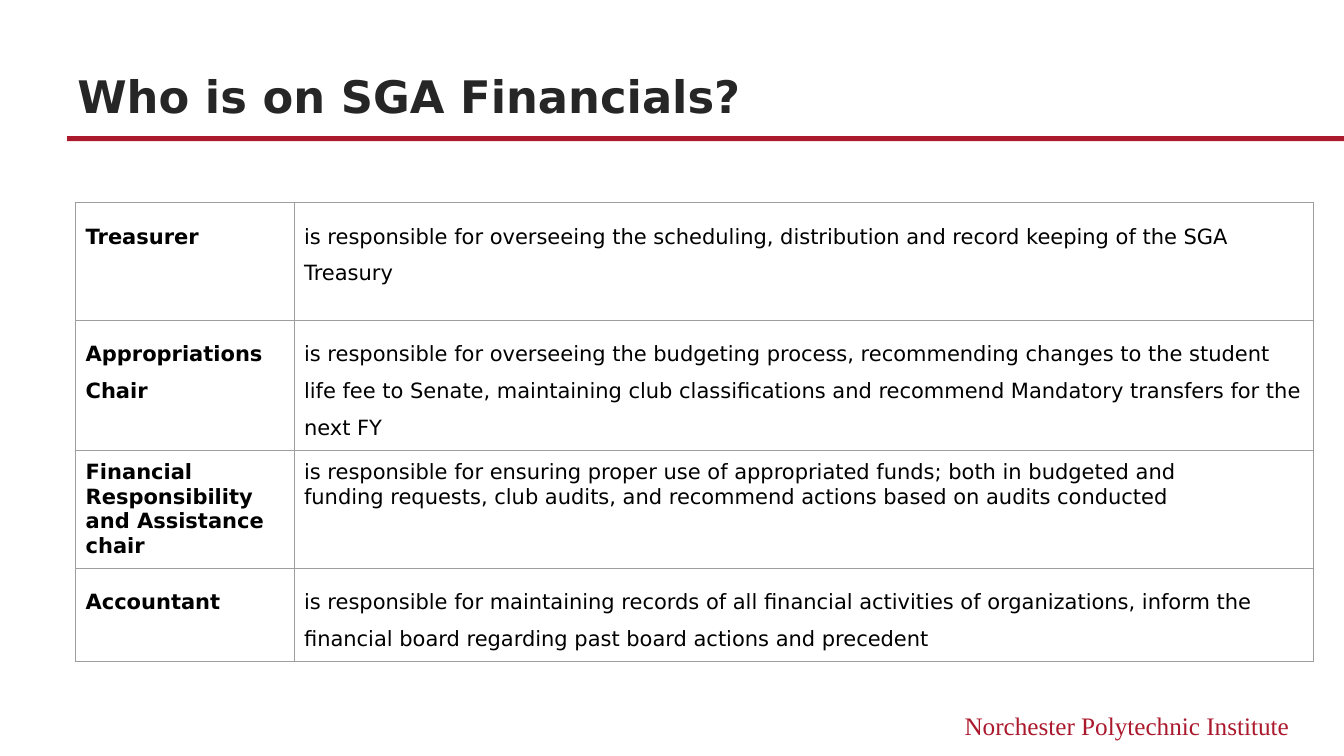
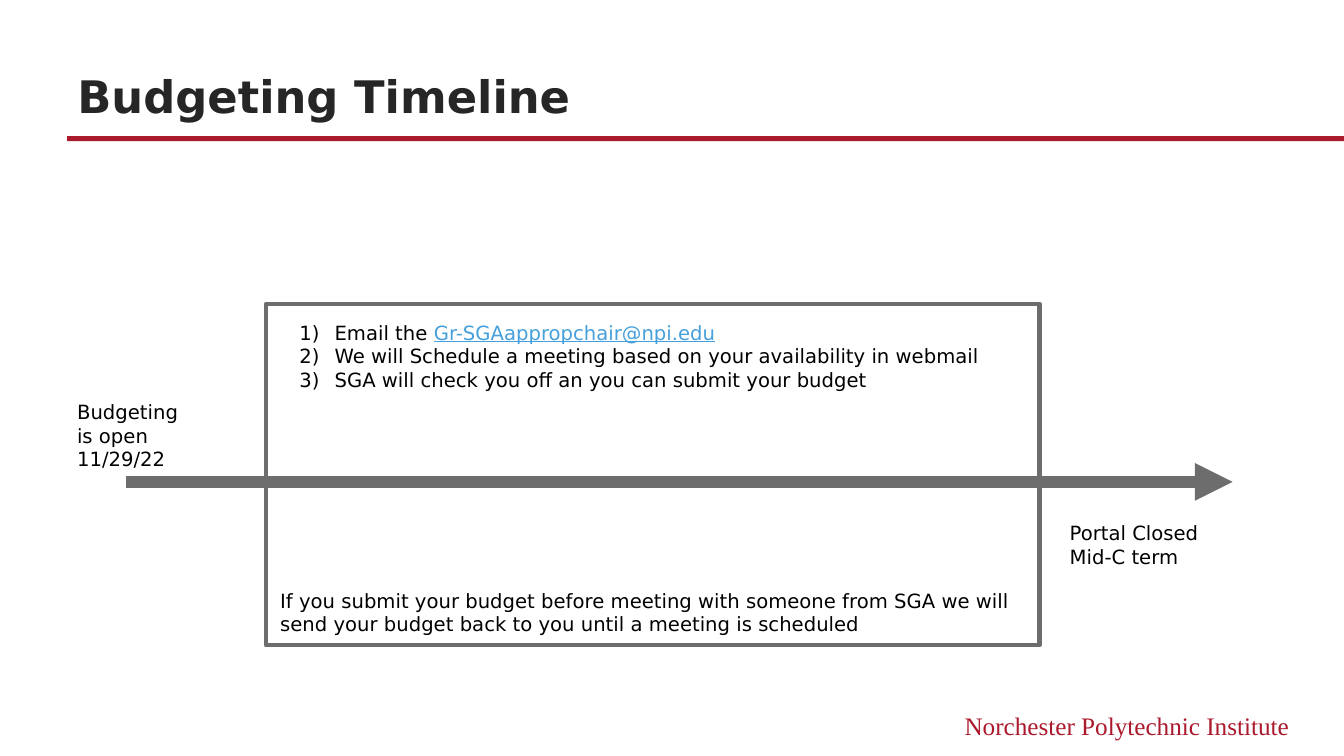
from lxml import etree
from pptx import Presentation
from pptx.dml.color import RGBColor
from pptx.enum import shapes, text
from pptx.oxml import ns
from pptx.util import Pt

# Shared look
BLACK = RGBColor(0x00, 0x00, 0x00)
INK = RGBColor(0x26, 0x26, 0x26)
CRIMSON = RGBColor(0xAB, 0x19, 0x2D)
GREY = RGBColor(0x6D, 0x6D, 0x6D)
BORDER = RGBColor(0x9E, 0x9E, 0x9E)
LINK = RGBColor(0x46, 0xA0, 0xDC)
SANS, SERIF = "DejaVu Sans", "Times New Roman"
WIDTH, HEIGHT, MARGIN = 960, 540, 48
TITLE_ONLY, TITLE_AND_BODY = 5, 1
FOOTER = "Norchester Polytechnic Institute"

# Roles: name, duty, line spacing, row height
ROLES_TITLE = "Who is on SGA Financials?"
ROLES = [
    ("Treasurer",
     "is responsible for overseeing the scheduling, distribution and record "
     "keeping of the SGA Treasury", 1.5, 84),
    ("Appropriations Chair",
     "is responsible for overseeing the budgeting process, recommending changes "
     "to the student life fee to Senate, maintaining club classifications and "
     "recommend Mandatory transfers for the next FY", 1.5, 93),
    ("Financial Responsibility and Assistance chair",
     "is responsible for ensuring proper use of appropriated funds; both in "
     "budgeted and\vfunding requests, club audits, and recommend actions based "
     "on audits conducted", 1, 83.5),
    ("Accountant",
     "is responsible for maintaining records of all financial activities of "
     "organizations, inform the financial board regarding past board actions "
     "and precedent", 1.5, 67),
]
ROLE_COLUMNS = (156, 728)

# Timeline: notes are (lines, left, top, width, height)
TIMELINE_TITLE = "Budgeting Timeline"
STEPS = [
    ["Email the ", ("Gr-SGAappropchair@npi.edu", LINK)],
    "We will Schedule a meeting based on your availability in webmail",
    "SGA will check you off an you can submit your budget",
]
NOTES = [
    (["Budgeting", "is open", "11/29/22"], 48, 278.6, 124, 65.5),
    (["Portal Closed", "Mid-C term"], 757, 365, 124, 48),
    (["If you submit your budget before meeting with someone from SGA we will "
      "send your budget back to you until a meeting is scheduled"],
     193, 413.3, 546.5, 48),
]
STEPS_AREA = (195.8, 221.8, 546.5, 65.5)
MEETING_FRAME = (190, 217, 552.5, 244)
ARROW_START, ARROW_END, ARROW_Y = 90, 880.5, 344.2


def points(values):
    return [Pt(value) for value in values]


def add_xml(parent, tag, **attributes):
    return etree.SubElement(parent, ns.qn(tag), attributes)


def write(frame, lines, size=14, font=SANS, color=BLACK, bold=False,
          align=text.PP_ALIGN.LEFT, anchor=text.MSO_ANCHOR.TOP,
          spacing=1, pad=7.2):
    """Fill a frame; a line is a string or a list of strings and (text, link colour)."""
    frame.word_wrap = True
    frame.auto_size = text.MSO_AUTO_SIZE.NONE
    frame.vertical_anchor = anchor
    frame.margin_left = frame.margin_right = Pt(7.2)
    frame.margin_top = frame.margin_bottom = Pt(pad)
    for number, line in enumerate(lines):
        para = frame.add_paragraph() if number else frame.paragraphs[0]
        para.alignment = align
        para.line_spacing = spacing
        para.space_before = Pt(0)
        for part in [line] if isinstance(line, str) else line:
            words, tint = (part, None) if isinstance(part, str) else part
            for index, piece in enumerate(words.split("\v")):
                if index:
                    para.add_line_break()
                span = para.add_run()
                span.text = piece
                span.font.name = font
                span.font.size = Pt(size)
                span.font.bold = bold
                span.font.color.rgb = tint or color
                span.font.underline = tint is not None


def add_text(page, lines, area, **style):
    write(page.shapes.add_textbox(*points(area)).text_frame, lines, **style)


def place(holder, area):
    holder.left, holder.top, holder.width, holder.height = points(area)


def add_page(deck, layout, title):
    page = deck.slides.add_slide(deck.slide_layouts[layout])
    place(page.shapes.title, (MARGIN, 27.4, 864, 63.4))
    write(page.shapes.title.text_frame, [title], size=32, color=INK, bold=True,
          anchor=text.MSO_ANCHOR.BOTTOM, pad=3.6)
    band = page.shapes.add_shape(
        shapes.MSO_SHAPE.RECTANGLE,
        *points((MARGIN, 97.2, WIDTH - MARGIN, 3.6)))
    band.shadow.inherit = False
    band.fill.solid()
    band.fill.fore_color.rgb = CRIMSON
    band.line.fill.background()
    add_text(page, [FOOTER], (576, 504, 352, 29), size=18, font=SERIF,
             color=CRIMSON, align=text.PP_ALIGN.RIGHT, pad=3.6)
    return page


def outline_cell(cell):
    properties = cell._tc.get_or_add_tcPr()
    for side in ("L", "R", "T", "B"):
        edge = add_xml(properties, f"a:ln{side}", w=str(Pt(0.75)))
        add_xml(add_xml(edge, "a:solidFill"), "a:srgbClr", val=str(BORDER))
    cell.fill.background()


def build_roles(deck):
    page = add_page(deck, TITLE_ONLY, ROLES_TITLE)
    total = sum(role[-1] for role in ROLES)
    table = page.shapes.add_table(
        len(ROLES), len(ROLE_COLUMNS),
        *points((54, 144.7, sum(ROLE_COLUMNS), total))).table
    table.first_row = table.horz_banding = False
    for column, width in zip(table.columns, ROLE_COLUMNS):
        column.width = Pt(width)
    for row, (name, duty, spacing, height) in zip(table.rows, ROLES):
        row.height = Pt(height)
        for cell, words in zip(row.cells, (name, duty)):
            write(cell.text_frame, [words], size=15, bold=words == name,
                  spacing=spacing)
            cell.margin_left = cell.margin_right = Pt(7.2)
            cell.margin_top = cell.margin_bottom = Pt(7.2)
            outline_cell(cell)


def number_list(frame):
    for para in frame.paragraphs:
        properties = para._p.get_or_add_pPr()
        properties.set("marL", str(Pt(36)))
        properties.set("indent", str(Pt(-25.2)))
        add_xml(add_xml(properties, "a:buClr"), "a:srgbClr", val=str(BLACK))
        add_xml(properties, "a:buFont", typeface=SANS)
        add_xml(properties, "a:buAutoNum", type="arabicParenR")


def build_timeline(deck):
    page = add_page(deck, TITLE_AND_BODY, TIMELINE_TITLE)

    # Arrow
    arrow = page.shapes.add_connector(
        shapes.MSO_CONNECTOR.STRAIGHT,
        *points((ARROW_START, ARROW_Y, ARROW_END, ARROW_Y)))
    arrow.line.color.rgb = GREY
    arrow.line.width = Pt(9)
    add_xml(arrow.line._get_or_add_ln(), "a:tailEnd", type="triangle")
    add_xml(arrow._element.spPr, "a:effectLst")

    # Meeting frame
    box = page.shapes.add_shape(shapes.MSO_SHAPE.RECTANGLE,
                                *points(MEETING_FRAME))
    box.shadow.inherit = False
    box.fill.background()
    box.line.color.rgb = GREY
    box.line.width = Pt(3)

    # Steps and notes
    steps = page.placeholders[1]
    place(steps, STEPS_AREA)
    write(steps.text_frame, STEPS)
    number_list(steps.text_frame)
    for lines, *area in NOTES:
        add_text(page, lines, area)


def main():
    deck = Presentation()
    deck.slide_width, deck.slide_height = Pt(WIDTH), Pt(HEIGHT)
    build_roles(deck)
    build_timeline(deck)
    deck.save("out.pptx")


if __name__ == "__main__":
    main()
